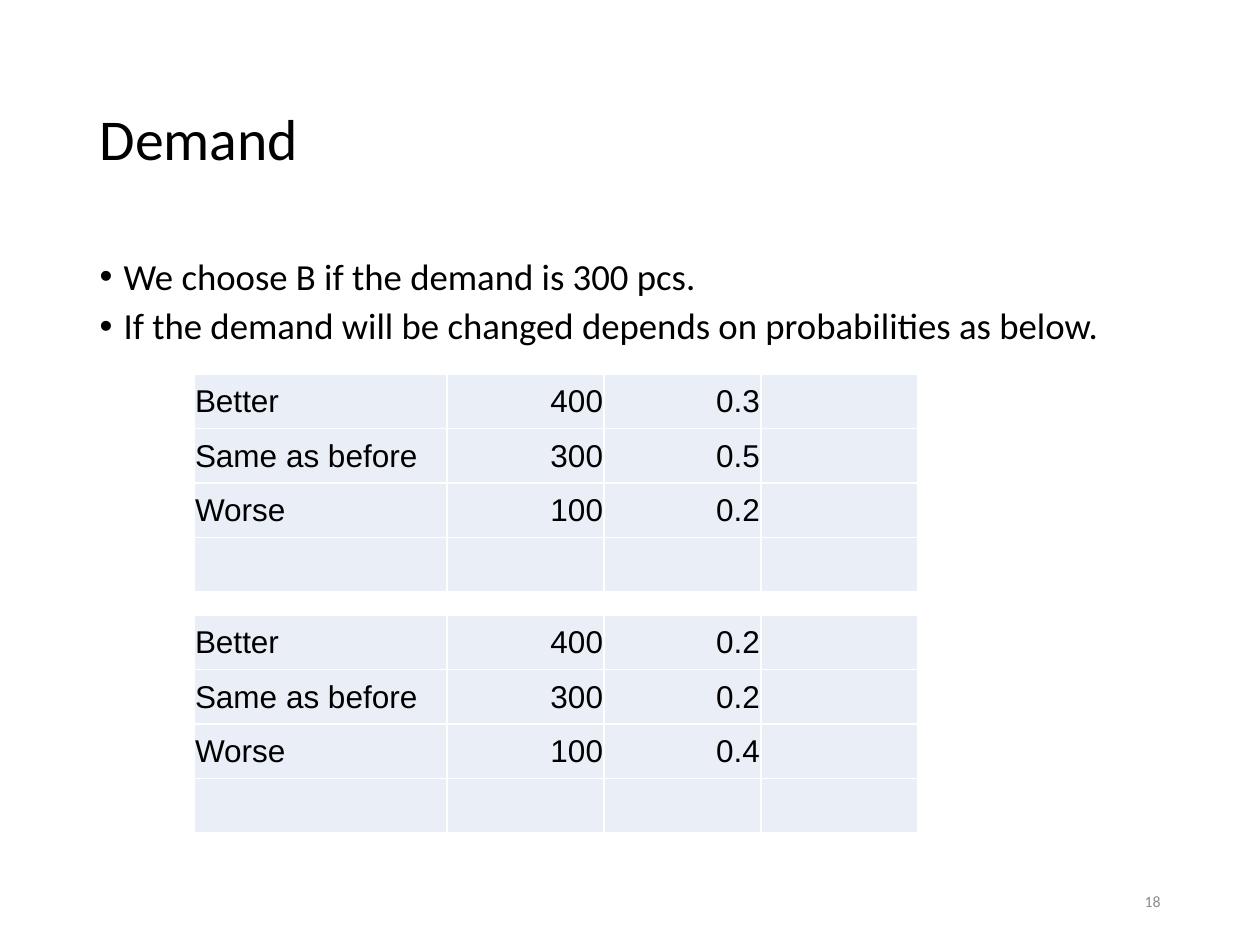
from lxml.etree import SubElement
from pptx import Presentation
from pptx.dml.color import RGBColor
from pptx.enum.text import MSO_ANCHOR as ANCHOR, MSO_AUTO_SIZE as AUTO, PP_ALIGN as ALIGN
from pptx.oxml.ns import qn
from pptx.util import Pt

PX = 914400 / 126  # EMU per px
BLACK = RGBColor(0x00, 0x00, 0x00)
GRAY = RGBColor(0x8C, 0x8C, 0x8C)
WHITE = RGBColor(0xFF, 0xFF, 0xFF)
PALE_BLUE = RGBColor(0xEA, 0xEF, 0xF7)


def px(n):
    return round(n * PX)


def place(sp, box):
    sp.left, sp.top, sp.width, sp.height = map(px, box)


def write(p, text, size, font="Calibri", color=BLACK, align=ALIGN.LEFT, spacing=None):
    p.alignment = align
    p.line_spacing = spacing
    r = p.add_run()
    r.text = text
    r.font.name, r.font.size = font, Pt(size)
    r.font.color.rgb = color


def add_bullet(p, indent):
    pPr = p._p.get_or_add_pPr()
    pPr.set("marL", str(px(indent)))
    pPr.set("indent", str(-px(indent)))
    SubElement(pPr, qn("a:buFont"), typeface="Arial")
    SubElement(pPr, qn("a:buChar"), char="•")


def set_borders(cell, color):
    tcPr = cell._tc.get_or_add_tcPr()
    for i, side in enumerate(("a:lnL", "a:lnR", "a:lnT", "a:lnB")):
        ln = SubElement(tcPr, qn(side), w=str(Pt(1)))
        SubElement(SubElement(ln, qn("a:solidFill")), qn("a:srgbClr"), val=str(color))
        tcPr.insert(i, ln)  # borders precede the fill


def fill_title(slide, box, text):
    sp = slide.shapes.title
    place(sp, box)
    tf = sp.text_frame
    tf.vertical_anchor, tf.auto_size = ANCHOR.MIDDLE, AUTO.NONE
    write(tf.paragraphs[0], text, 33, spacing=0.9)


def fill_list(slide, box, items):
    sp = slide.placeholders[1]
    place(sp, box)
    tf = sp.text_frame
    tf.auto_size = AUTO.NONE
    for i, item in enumerate(items):
        p = tf.add_paragraph() if i else tf.paragraphs[0]
        write(p, item, 21, spacing=0.9)
        p.space_before = Pt(5.7 if i else 0)
        add_bullet(p, 24)


def add_demand_table(slide, box, widths, rows):
    n_rows = len(rows) + 1  # the last row stays empty
    table = slide.shapes.add_table(n_rows, len(widths), *map(px, box)).table
    table.first_row = table.horz_banding = False
    for column, width in zip(table.columns, widths):
        column.width = px(width)
    for row in table.rows:
        row.height = px(box[3] / n_rows)
    for cell in table.iter_cells():
        cell.fill.solid()
        cell.fill.fore_color.rgb = PALE_BLUE
        set_borders(cell, WHITE)
    for i, values in enumerate(rows):
        for j, value in enumerate(values):
            cell = table.cell(i, j)
            cell.vertical_anchor = ANCHOR.MIDDLE
            cell.margin_left = cell.margin_right = cell.margin_top = px(1)
            cell.margin_bottom = 0
            write(cell.text_frame.paragraphs[0], value, 18, font="Arial",
                  align=ALIGN.RIGHT if j else ALIGN.LEFT)


def add_page_number(slide, box, number):
    tf = slide.shapes.add_textbox(*map(px, box)).text_frame
    tf.word_wrap, tf.vertical_anchor = True, ANCHOR.MIDDLE
    write(tf.paragraphs[0], number, 9, color=GRAY, align=ALIGN.RIGHT)


def main():
    prs = Presentation()
    prs.slide_width, prs.slide_height = px(1260), px(945)
    slide = prs.slides.add_slide(prs.slide_layouts[1])

    # Title and points
    fill_title(slide, (87, 50, 1086, 183), "Demand")
    fill_list(slide, (87, 252, 1086, 101), [
        "We choose B if the demand is 300 pcs.",
        "If the demand will be changed depends on probabilities as below.",
    ])

    # One table for each set of probabilities
    outlooks = [("Better", "400"), ("Same as before", "300"), ("Worse", "100")]
    widths = [253, 157, 157, 157]
    for top, chances in ((374, ("0.3", "0.5", "0.2")), (615, ("0.2", "0.2", "0.4"))):
        rows = [(*outlook, chance) for outlook, chance in zip(outlooks, chances)]
        add_demand_table(slide, (194, top, sum(widths), 218), widths, rows)

    add_page_number(slide, (890, 876, 283, 50), "18")
    prs.save("out.pptx")


if __name__ == "__main__":
    main()
